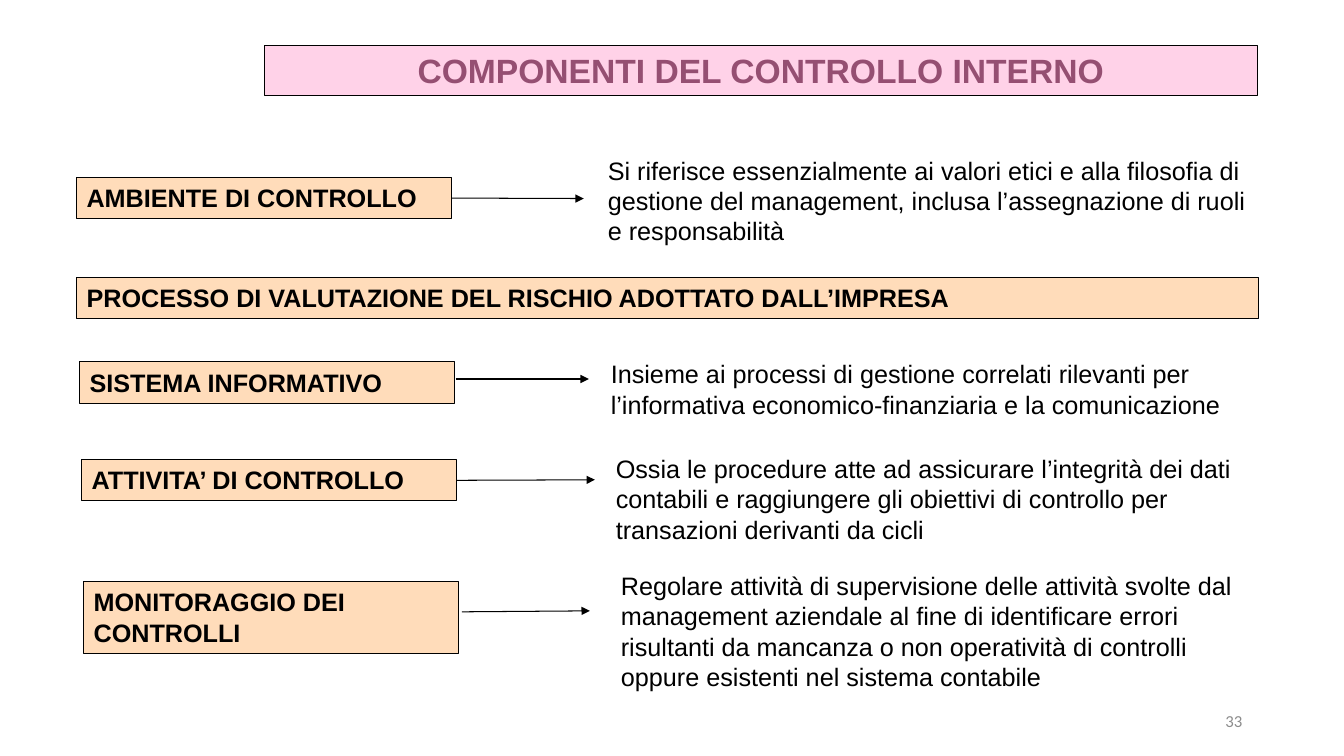
from pptx import Presentation
from pptx.dml.color import RGBColor
from pptx.enum.shapes import MSO_CONNECTOR as Conn, MSO_SHAPE as Geom
from pptx.enum.text import MSO_ANCHOR as Anchor, MSO_AUTO_SIZE as Auto, PP_ALIGN as Align
from pptx.oxml.ns import qn
from pptx.util import Inches, Pt
from lxml.etree import SubElement as Sub

PINK, PEACH, PLUM, BLACK, GRAY = "FF99CC", "FFCC99", "954F72", "000000", "8C8C8C"

# label, label place (left, top, height), arrow (x1, y1, x2, y2), joined, note, note place
ROWS = [
    ("AMBIENTE DI CONTROLLO", (0.76, 1.76, 0.41), (4.48, 1.98, 5.79, 1.97), True,
     "Si riferisce essenzialmente ai valori etici e alla filosofia di gestione del "
     "management, inclusa l’assegnazione di ruoli e responsabilità", (5.93, 1.49, 1)),
    ("SISTEMA INFORMATIVO", (0.79, 3.59, 0.41), (4.52, 3.76, 5.84, 3.76), False,
     "Insieme ai processi di gestione correlati rilevanti per l’informativa "
     "economico-finanziaria e la comunicazione", (5.96, 3.51, 0.7)),
    ("ATTIVITA’ DI CONTROLLO", (0.81, 4.56, 0.41), (4.54, 4.76, 5.9, 4.76), True,
     "Ossia le procedure atte ad assicurare l’integrità dei dati contabili e "
     "raggiungere gli obiettivi di controllo per transazioni derivanti da cicli",
     (6.01, 4.45, 1)),
    ("MONITORAGGIO DEI CONTROLLI", (0.83, 5.77, 0.71), (4.58, 6.07, 5.85, 6.06), False,
     "Regolare attività di supervisione delle attività svolte dal management "
     "aziendale al fine di identificare errori risultanti da mancanza o non "
     "operatività di controlli oppure esistenti nel sistema contabile",
     (6.06, 5.61, 1.3)),
]


def rgb(code):
    return RGBColor.from_string(code)


def write(shape, text, size=18, color=BLACK, bold=False, align=Align.LEFT,
          face="Arial", anchor=Anchor.TOP, auto=Auto.SHAPE_TO_FIT_TEXT):
    frame = shape.text_frame
    frame.word_wrap = True
    frame.auto_size = auto
    frame.vertical_anchor = anchor
    para = frame.paragraphs[0]
    para.text = text
    para.alignment = align
    font = para.font
    font.name, font.size, font.bold = face, Pt(size), bold
    font.color.rgb = rgb(color)


def add_box(slide, text, place, fill, alpha, **style):
    """Add a bordered label whose fill has an opacity of alpha percent."""
    box = slide.shapes.add_shape(Geom.RECTANGLE, *map(Inches, place))
    box.shadow.inherit = False
    box.fill.solid()
    box.fill.fore_color.rgb = rgb(fill)
    tint = box.fill._xPr.find(qn("a:solidFill"))[0]
    Sub(tint, qn("a:alpha"), val=str(alpha * 1000))
    box.line.color.rgb = rgb(BLACK)
    box.line.width = Pt(0.75)
    write(box, text, bold=True, **style)
    return box


def add_note(slide, text, place, **style):
    write(slide.shapes.add_textbox(*map(Inches, place)), text, **style)


def add_arrow(slide, ends, start=None):
    """Add an arrow, joined to the right side of start if given."""
    arrow = slide.shapes.add_connector(Conn.STRAIGHT, *map(Inches, ends))
    if start is not None:
        arrow.begin_connect(start, 3)
    arrow.line.color.rgb = rgb(BLACK)
    arrow.line.width = Pt(0.75)
    Sub(arrow.line._get_or_add_ln(), qn("a:tailEnd"), type="triangle")
    Sub(arrow._element.spPr, qn("a:effectLst"))


def main():
    deck = Presentation()
    deck.slide_width, deck.slide_height = Inches(13.33), Inches(7.5)
    slide = deck.slides.add_slide(deck.slide_layouts[6])

    add_box(slide, "COMPONENTI DEL CONTROLLO INTERNO", (2.62, 0.45, 9.85, 0.5),
            PINK, 44, size=24, color=PLUM, align=Align.CENTER)
    add_box(slide, "PROCESSO DI VALUTAZIONE DEL RISCHIO ADOTTATO DALL’IMPRESA",
            (0.76, 2.75, 11.72, 0.41), PEACH, 67)
    for label, (left, top, high), ends, joined, note, (x, y, tall) in ROWS:
        box = add_box(slide, label, (left, top, 3.72, high), PEACH, 67)
        add_note(slide, note, (x, y, 6.64, tall))
        add_arrow(slide, ends, box if joined else None)
    add_note(slide, "33", (9.42, 6.95, 3, 0.4), size=12, color=GRAY, face="Calibri",
             align=Align.RIGHT, anchor=Anchor.MIDDLE, auto=Auto.NONE)
    deck.save("out.pptx")


if __name__ == "__main__":
    main()
